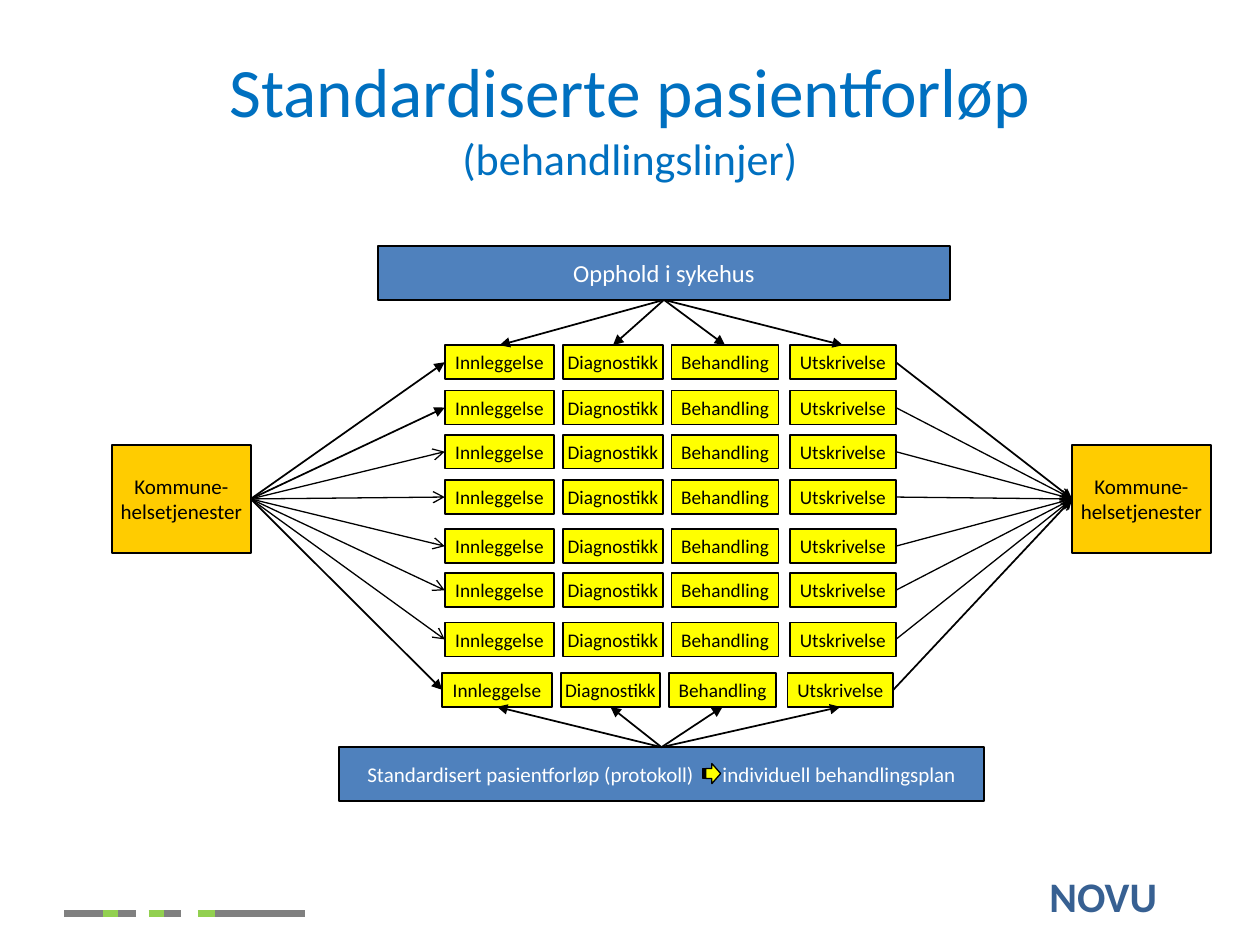
from lxml.etree import SubElement
from pptx import Presentation
from pptx.dml.color import RGBColor
from pptx.enum.shapes import MSO_CONNECTOR, MSO_SHAPE
from pptx.enum.text import MSO_ANCHOR, MSO_AUTO_SIZE, PP_ALIGN
from pptx.oxml.ns import qn
from pptx.util import Inches, Pt

TITLE = [("Standardiserte pasientforløp ", 39.6), ("(behandlingslinjer)", 25.2)]
SERVICE = "Kommune-\nhelsetjenester"
HOSPITAL = "Opphold i sykehus"
PLAN = ["Standardisert pasientforløp (protokoll)", " ", "individuell behandlingsplan"]
ORGANISATION = "NOVU"

# Step, left edge, width
STEPS = [("Innleggelse", 3.53, 0.87), ("Diagnostikk", 4.47, 0.79),
         ("Behandling", 5.33, 0.85), ("Utskrivelse", 6.27, 0.84)]
STEP_HEIGHT = 0.27
# Row top, shift to the right, arrow style in, arrow style out
BOLD, THIN = ("triangle", 1), ("arrow", 0.75)
ROWS = [(2.74, 0, BOLD, BOLD), (3.1, 0, BOLD, THIN), (3.45, 0, THIN, THIN),
        (3.81, 0, THIN, THIN), (4.2, 0, THIN, THIN), (4.55, 0, THIN, THIN),
        (4.94, 0, THIN, THIN), (5.34, -0.02, BOLD, BOLD)]

GREY, GREEN = "808080", "92D050"
DASHES = [(0.82, 0.96, GREEN), (0.51, 0.82, GREY), (1.71, 2.42, GREY),
          (0.94, 1.08, GREY), (1.18, 1.32, GREEN), (1.3, 1.44, GREY),
          (1.57, 1.71, GREEN)]
DASH_Y = 7.25
BLACK, WHITE, BLUE, YELLOW, ORANGE = "000000", "FFFFFF", "4F81BD", "FFFF00", "FFCC00"
TOP, LEFT, BOTTOM, RIGHT = range(4)  # connection sites of a rectangle


def rgb(color):
    return RGBColor.from_string(color)


def format_run(r, size, color, bold=False):
    for name, value in {"name": "Calibri", "size": Pt(size), "bold": bold}.items():
        setattr(r.font, name, value)
    r.font.color.rgb = rgb(color)


def add_box(shapes, at, fill, texts=(), size=12, color=BLACK,
            kind=MSO_SHAPE.RECTANGLE, width=1):
    sp = shapes.add_shape(kind, *map(Inches, at))
    sp.shadow.inherit = False
    sp.fill.solid()
    sp.fill.fore_color.rgb = rgb(fill)
    sp.line.color.rgb = rgb(BLACK)
    sp.line.width = Pt(width)
    tf = sp.text_frame
    tf.word_wrap = False
    tf.vertical_anchor = MSO_ANCHOR.MIDDLE
    p = tf.paragraphs[0]
    p.alignment = PP_ALIGN.CENTER
    if len(texts) == 1:
        p.text = texts[0]
    else:
        for text in texts:
            p.add_run().text = text
    for r in p.runs:
        format_run(r, size, color)
    return sp


def add_line(shapes, start, end, color, width):
    line = shapes.add_connector(MSO_CONNECTOR.STRAIGHT, *map(Inches, (*start, *end)))
    line.line.color.rgb = rgb(color)
    line.line.width = Pt(width)
    SubElement(line._element.spPr, qn("a:effectLst"))
    return line


def join(shapes, start, start_site, end, end_site, style=BOLD):
    """Glue an arrow to connection sites of two boxes."""
    head, width = style
    line = add_line(shapes, (0, 0), (0, 0), BLACK, width)
    line.begin_connect(start, start_site)
    line.end_connect(end, end_site)
    SubElement(line.line._get_or_add_ln(), qn("a:tailEnd"), type=head)


prs = Presentation()
prs.slide_width, prs.slide_height = Inches(10), Inches(7.5)
s = prs.slides.add_slide(prs.slide_layouts[5])
shapes = s.shapes

title = shapes.title
title.left, title.top, title.width, title.height = map(Inches, (0.5, 0.3, 9, 1.25))
tf = title.text_frame
tf.auto_size = MSO_AUTO_SIZE.NONE
tf.vertical_anchor = MSO_ANCHOR.MIDDLE
p = tf.paragraphs[0]
p.alignment = PP_ALIGN.CENTER
for text, size in TITLE:
    r = p.add_run()
    r.text = text
    format_run(r, size, "0070C0")

before, after = [add_box(shapes, (x, 3.53, 1.1, 0.86), ORANGE, [SERVICE])
                 for x in (0.89, 8.51)]
hospital = add_box(shapes, (3, 1.95, 4.54, 0.43), BLUE, [HOSPITAL], 14, WHITE)
plan = add_box(shapes, (2.69, 5.93, 5.12, 0.43), BLUE, PLAN, 12, WHITE)
# Widen the single space to make room for the small arrow
plan.text_frame.paragraphs[0].runs[1].font._element.set("spc", "1360")
add_box(shapes, (5.58, 6.06, 0.14, 0.16), YELLOW,
        kind=MSO_SHAPE.STRIPED_RIGHT_ARROW, width=0.75)

rows = []
for top, shift, style_in, style_out in ROWS:
    group = shapes.add_group_shape()
    row = [add_box(group.shapes, (left + shift, top, width, STEP_HEIGHT), YELLOW, [name], 11)
           for name, left, width in STEPS]
    rows.append(row)
    join(shapes, before, RIGHT, row[0], LEFT, style_in)
    join(shapes, row[-1], RIGHT, after, LEFT, style_out)
for first, last in zip(rows[0], rows[-1]):
    join(shapes, hospital, BOTTOM, first, TOP)
    join(shapes, plan, TOP, last, BOTTOM)

dashes = shapes.add_group_shape()
for x1, x2, color in DASHES:
    add_line(dashes.shapes, (x1, DASH_Y), (x2, DASH_Y), color, 3.75)

tf = shapes.add_textbox(*map(Inches, (8.23, 6.86, 1.22, 0.5))).text_frame
tf.word_wrap = False
r = tf.paragraphs[0].add_run()
r.text = ORGANISATION
format_run(r, 24, "376092", bold=True)

prs.save("out.pptx")
